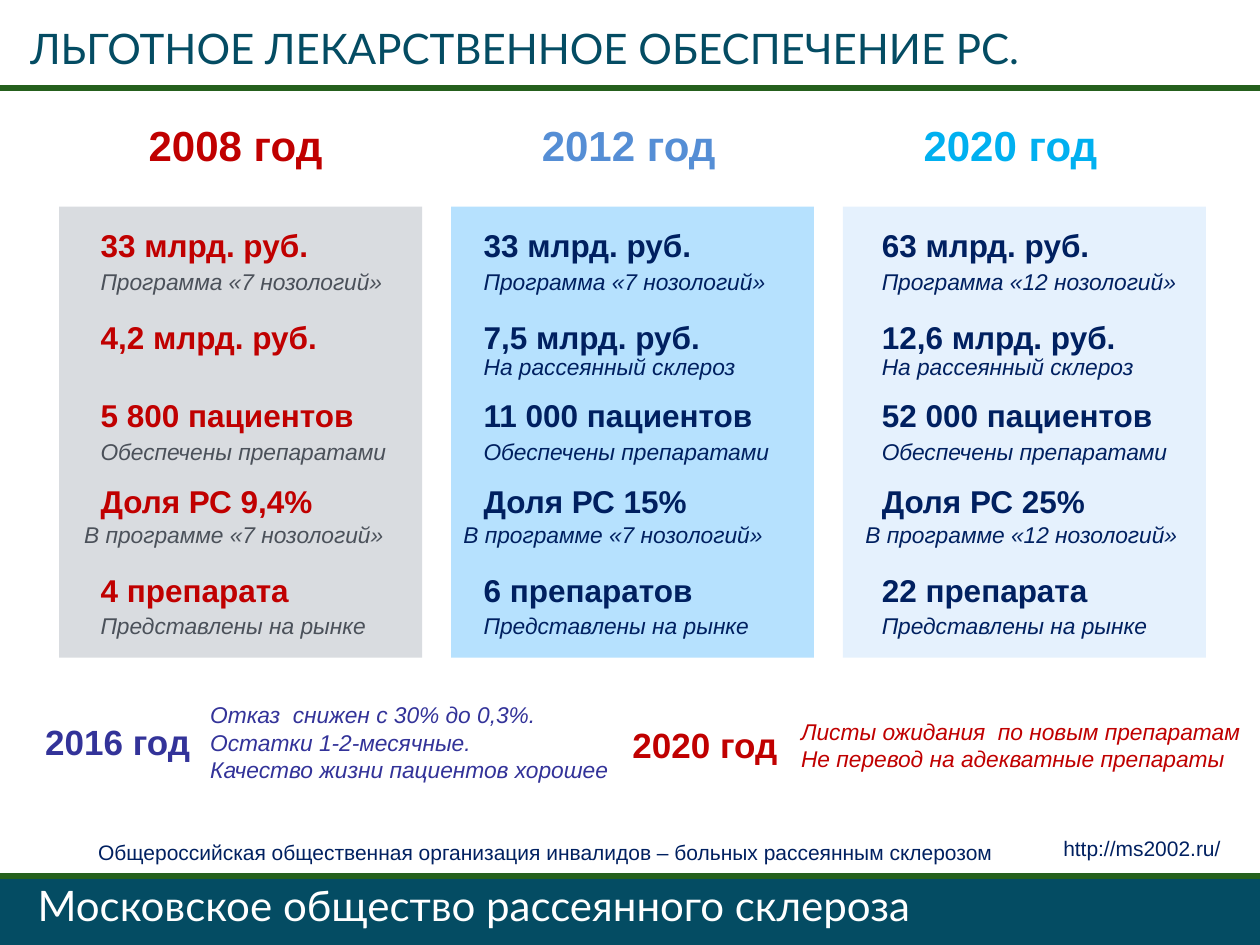
from lxml import etree
from pptx import Presentation, util as u
from pptx.dml.color import RGBColor
from pptx.enum import shapes, text
from pptx.oxml import ns

COLORS = {
    "teal": "044C63", "green": "25601D", "white": "FFFFFF", "navy": "002060",
    "red": "C00000", "grey": "4B515A", "indigo": "333399", "blue": "558ED5",
    "cyan": "00B0F0", "grey_panel": "D9DCE0", "sky_panel": "B6E1FE",
    "clear_panel": "027EEE",
}
VALUE = {"size": u.Pt(18), "bold": True}
NOTE = {"size": u.Pt(13), "italic": True}
YEAR = {"size": u.Pt(24), "bold": True}
SMALL_YEAR = {"size": u.Pt(20), "bold": True}
FOOTNOTE = {"size": u.Pt(12)}
HEADING = {"size": u.Pt(24), "name": "Lato"}

PANEL_LEFT, PANEL_STEP = 0.47, 3.11
VALUE_TOPS = (1.68, 2.41, 3.03, 3.71, 4.42)
NOTE_TOPS = (2.07, 2.75, 3.42, 4.08, 4.8)
SHARE_ROW = 3

COLUMNS = [
    {"year": "2008 год", "year_color": "red", "year_center": 1.87,
     "panel": "grey_panel", "alpha": None, "left": 0.7, "share_left": 0.57,
     "value_color": "red", "note_color": "grey",
     "rows": [("33 млрд. руб.", "Программа «7 нозологий»"),
              ("4,2 млрд. руб.", None),
              ("5 800 пациентов", "Обеспечены препаратами"),
              ("Доля РС 9,4%", "В программе «7 нозологий»"),
              ("4 препарата", "Представлены на рынке")]},
    {"year": "2012 год", "year_color": "blue", "year_center": 4.99,
     "panel": "sky_panel", "alpha": None, "left": 3.74, "share_left": 3.58,
     "value_color": "navy", "note_color": "navy",
     "rows": [("33 млрд. руб.", "Программа «7 нозологий»"),
              ("7,5 млрд. руб.", "На рассеянный склероз"),
              ("11 000 пациентов", "Обеспечены препаратами"),
              ("Доля РС 15%", "В программе «7 нозологий»"),
              ("6 препаратов", "Представлены на рынке")]},
    {"year": "2020 год", "year_color": "cyan", "year_center": 8.02,
     "panel": "clear_panel", "alpha": 10, "left": 6.9, "share_left": 6.77,
     "value_color": "navy", "note_color": "navy",
     "rows": [("63 млрд. руб.", "Программа «12 нозологий»"),
              ("12,6 млрд. руб.", "На рассеянный склероз"),
              ("52 000 пациентов", "Обеспечены препаратами"),
              ("Доля РС 25%", "В программе «12 нозологий»"),
              ("22 препарата", "Представлены на рынке")]},
]


def rgb(color):
    return RGBColor.from_string(COLORS[color])


def write(box, words, look, color, align="LEFT", anchor="MIDDLE", wrap=True, grow=False):
    """Fill a text shape with one formatted paragraph."""
    frame = box.text_frame
    frame.word_wrap = wrap
    frame.vertical_anchor = text.MSO_ANCHOR[anchor]
    fit = text.MSO_AUTO_SIZE
    frame.auto_size = fit.SHAPE_TO_FIT_TEXT if grow else fit.NONE
    para = frame.paragraphs[0]
    para.text = words
    para.alignment = text.PP_ALIGN[align]
    for span in para.runs:
        for key, value in {"name": "Arial", **look}.items():
            setattr(span.font, key, value)
        span.font.color.rgb = rgb(color)


def add_text(parent, place, words, look, color, **layout):
    box = parent.shapes.add_textbox(*map(u.Inches, place))
    write(box, words, look, color, **layout)


def add_panel(page, place, color, alpha=None):
    panel = page.shapes.add_shape(shapes.MSO_SHAPE.RECTANGLE, *map(u.Inches, place))
    panel.shadow.inherit = False
    panel.fill.solid()
    panel.fill.fore_color.rgb = rgb(color)
    panel.line.fill.background()
    if alpha is not None:
        tint = panel.fill._xPr.find(".//" + ns.qn("a:srgbClr"))
        etree.SubElement(tint, ns.qn("a:alpha"), val=str(alpha * 1000))


def add_rule(page, top):
    rule = page.shapes.add_connector(
        shapes.MSO_CONNECTOR.STRAIGHT, 0, u.Inches(top), u.Inches(10), u.Inches(top))
    rule.line.color.rgb = rgb("green")
    rule.line.width = u.Pt(3.5)
    etree.SubElement(rule._element.spPr, ns.qn("a:effectLst"))


def add_title(page, words):
    title = page.shapes.title
    place = {"left": 0.14, "top": 0.13, "width": 9.59, "height": 0.5}
    for key, value in place.items():
        setattr(title, key, u.Inches(value))
    write(title, words, HEADING, "teal", anchor="TOP", grow=True)


def add_column(page, column):
    add_text(page, (column["year_center"] - 1.05, 0.88, 2.1, 0.53), column["year"],
             YEAR, column["year_color"], align="CENTER")
    for row, (value, note) in enumerate(column["rows"]):
        parent = page.shapes.add_group_shape() if note else page
        add_text(parent, (column["left"], VALUE_TOPS[row], 2.56, 0.53), value,
                 VALUE, column["value_color"])
        if note:
            left = column["share_left" if row == SHARE_ROW else "left"]
            add_text(parent, (left, NOTE_TOPS[row], 2.7, 0.32), note,
                     NOTE, column["note_color"], grow=True)


def add_outcome(page, year, year_place, words, words_place, color):
    group = page.shapes.add_group_shape()
    add_text(group, words_place, words, NOTE, color, grow=True)
    add_text(group, year_place, year, SMALL_YEAR, color, align="CENTER")


def main():
    deck = Presentation()
    deck.slide_width, deck.slide_height = u.Inches(10), u.Inches(7.5)
    page = deck.slides.add_slide(deck.slide_layouts.get_by_name("Title Only"))

    # Header and footer
    add_title(page, "ЛЬГОТНОЕ ЛЕКАРСТВЕННОЕ ОБЕСПЕЧЕНИЕ РС.")
    add_rule(page, 0.7)
    add_panel(page, (0, 6.97, 10, 0.53), "teal")
    add_rule(page, 6.95)
    add_text(page, (0.2, 6.93, 7.27, 0.51), "Московское общество рассеянного склероза",
             HEADING, "white", anchor="TOP", wrap=False, grow=True)
    add_text(page, (0.68, 6.61, 7.72, 0.22),
             "Общероссийская общественная организация инвалидов – "
             "больных рассеянным склерозом", FOOTNOTE, "navy", anchor="TOP")
    add_text(page, (8.34, 6.58, 1.49, 0.3), "http://ms2002.ru/",
             FOOTNOTE, "navy", anchor="TOP", grow=True)

    # Year columns
    for index, column in enumerate(COLUMNS):
        place = (PANEL_LEFT + index * PANEL_STEP, 1.64, 2.88, 3.58)
        add_panel(page, place, column["panel"], column["alpha"])
        add_column(page, column)

    # Outcomes below the columns
    add_outcome(page, "2016 год", (0.15, 5.62, 1.57, 0.53),
                "Отказ  снижен с 30% до 0,3%.\nОстатки 1-2-месячные.\n"
                "Качество жизни пациентов хорошее", (1.57, 5.51, 3.58, 0.76), "indigo")
    add_outcome(page, "2020 год", (4.77, 5.64, 1.65, 0.53),
                "Листы ожидания  по новым препаратам\n"
                "Не перевод на адекватные препараты", (6.26, 5.64, 3.74, 0.54), "red")

    deck.save("out.pptx")


if __name__ == "__main__":
    main()
